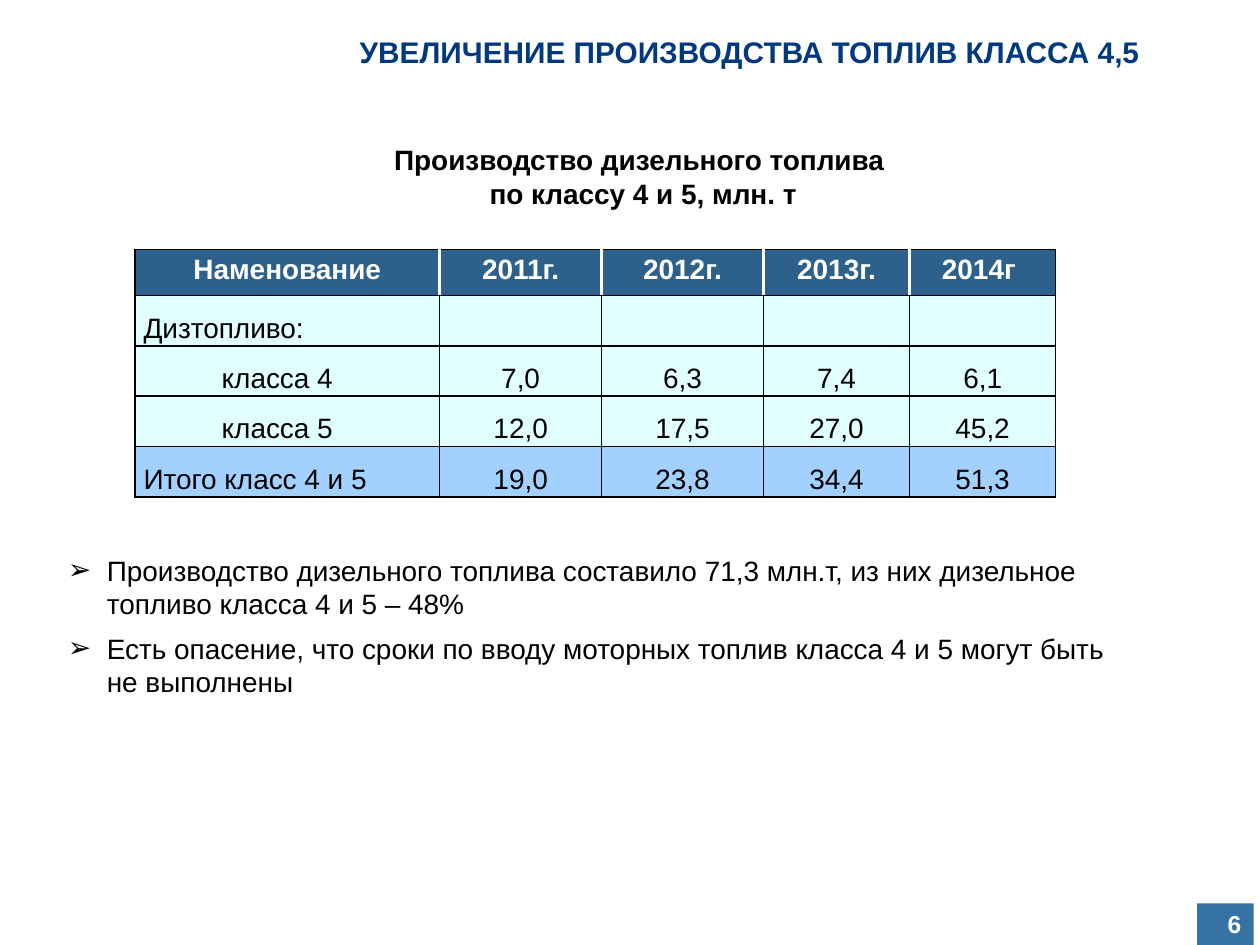
from dataclasses import dataclass

from lxml.etree import SubElement
from pptx import Presentation
from pptx.dml.color import RGBColor
from pptx.enum.shapes import MSO_SHAPE
from pptx.enum.text import MSO_ANCHOR, MSO_AUTO_SIZE, PP_ALIGN
from pptx.oxml.ns import qn
from pptx.util import Inches, Pt


@dataclass(frozen=True)
class Theme:
    """Colours, font and type sizes of the slide."""
    font: str = "Arial"
    title: str = "00397E"
    text: str = "000000"
    light: str = "FFFFFF"
    head: str = "2D608B"
    body: str = "E1FFFF"
    total: str = "A3D1FF"
    badge: str = "3672A4"
    title_size: float = 17
    text_size: float = 16
    badge_size: float = 14
    line: float = 1
    divider: float = 2.25


T = Theme()
WIDTH, HEIGHT = Inches(10), Inches(7.5)
COLUMNS = (24.2, 12.85, 12.85, 11.6, 11.6)
ROWS = (4.87, 5.33, 5.33, 5.33, 5.33)
TABLE = (
    ("Наменование", "2011г.", "2012г.", "2013г.", "2014г "),
    ("Дизтопливо:", "", "", "", ""),
    ("класса 4", "7,0", "6,3", "7,4", "6,1"),
    ("класса 5", "12,0", "17,5", "27,0", "45,2"),
    ("Итого класс 4 и 5", "19,0", "23,8", "34,4", "51,3"),
)
NOTES = (
    "Производство дизельного топлива составило 71,3 млн.т, из них "
    "дизельное топливо класса 4 и 5 – 48%",
    "Есть опасение, что сроки по вводу моторных топлив класса 4 и 5 "
    "могут быть \nне выполнены",
)


def across(share):
    """Turn a percentage of the slide width into a length."""
    return int(WIDTH * share / 100)


def down(share):
    """Turn a percentage of the slide height into a length."""
    return int(HEIGHT * share / 100)


def area(x, y, w, h):
    """Return left, top, width and height from percentages."""
    return across(x), down(y), across(w), down(h)


def write(p, text, size=T.text_size, color=T.text, bold=False, align=PP_ALIGN.LEFT):
    """Add text to a paragraph, one run for each line."""
    p.alignment = align
    for i, line in enumerate(text.split("\n")):
        if i:
            p.add_line_break()
        r = p.add_run()
        r.text = line
        r.font.name, r.font.size, r.font.bold = T.font, Pt(size), bold
        r.font.color.rgb = RGBColor.from_string(color)


def frame(sp, anchor=MSO_ANCHOR.TOP):
    """Prepare a wrapping text frame and return it."""
    tf = sp.text_frame
    tf.word_wrap = True
    tf.auto_size = MSO_AUTO_SIZE.NONE
    tf.vertical_anchor = anchor
    return tf


def add_title(s, text):
    """Place and fill the title placeholder."""
    sp = s.shapes.title
    sp.left, sp.top, sp.width, sp.height = area(22.6, 2.93, 73.8, 5.2)
    write(frame(sp).paragraphs[0], text, T.title_size, T.title, True, PP_ALIGN.CENTER)


def add_caption(s, text):
    """Add the heading above the table."""
    sp = s.shapes.add_textbox(*area(10.7, 14.4, 80.7, 8.53))
    p = frame(sp, MSO_ANCHOR.MIDDLE).paragraphs[0]
    write(p, text, bold=True, align=PP_ALIGN.CENTER)


def add_border(cell, side, color, width):
    """Draw one edge of a table cell."""
    ln = SubElement(cell._tc.get_or_add_tcPr(), qn(f"a:ln{side}"), w=str(Pt(width)))
    SubElement(SubElement(ln, qn("a:solidFill")), qn("a:srgbClr"), val=color)


def style_cell(cell, row, col):
    """Set margins, borders and fill by position in the table."""
    cell.margin_left = cell.margin_right = Inches(0.07)
    cell.margin_top = cell.margin_bottom = 0
    cell.vertical_anchor = MSO_ANCHOR.MIDDLE if row else MSO_ANCHOR.TOP
    inner = {"L": col > 0, "R": col < len(COLUMNS) - 1}
    for side in "LRTB":
        if row == 0 and inner.get(side):
            add_border(cell, side, T.light, T.divider)
        else:
            add_border(cell, side, T.text, T.line)
    fill = {0: T.head, len(ROWS) - 1: T.total}.get(row, T.body)
    cell.fill.solid()
    cell.fill.fore_color.rgb = RGBColor.from_string(fill)


def fill_cell(cell, row, col, text):
    """Write the text of one table cell."""
    p = cell.text_frame.paragraphs[0]
    p.line_spacing = 1.5 if row else 1.15
    align = PP_ALIGN.LEFT if row and not col else PP_ALIGN.CENTER
    if text:
        write(p, text, color=T.text if row else T.light, bold=row == 0, align=align)
    if col == 0 and text.startswith("класса"):
        p._p.get_or_add_pPr().set("marL", str(Inches(0.62)))


def add_fuel_table(s):
    """Add the diesel output table."""
    place = area(10.7, 26.4, sum(COLUMNS), sum(ROWS))
    table = s.shapes.add_table(len(ROWS), len(COLUMNS), *place).table
    for column, share in zip(table.columns, COLUMNS):
        column.width = across(share)
    for row, share in zip(table.rows, ROWS):
        row.height = down(share)
    for i, values in enumerate(TABLE):
        for j, text in enumerate(values):
            style_cell(table.cell(i, j), i, j)
            fill_cell(table.cell(i, j), i, j, text)


def add_notes_list(s, items):
    """Add the bulleted conclusions."""
    tf = frame(s.shapes.add_textbox(*area(4.4, 57.9, 90.6, 21.6)))
    for i, text in enumerate(items):
        p = tf.add_paragraph() if i else tf.paragraphs[0]
        pPr = p._p.get_or_add_pPr()
        pPr.set("marL", str(Inches(0.31)))
        pPr.set("indent", str(-Inches(0.31)))
        SubElement(pPr, qn("a:buFont"), typeface=T.font)
        SubElement(pPr, qn("a:buChar"), char="➢")
        p.space_before = Pt(6 if i else 0)
        write(p, text)


def add_page_badge(s, number):
    """Add the page number in the corner."""
    sp = s.shapes.add_shape(MSO_SHAPE.RECTANGLE, *area(95, 95.6, 4.5, 4.4))
    sp.shadow.inherit = False
    sp.fill.solid()
    sp.fill.fore_color.rgb = RGBColor.from_string(T.badge)
    sp.line.fill.background()
    p = frame(sp, MSO_ANCHOR.MIDDLE).paragraphs[0]
    write(p, number, T.badge_size, T.light, True, PP_ALIGN.RIGHT)


def main():
    """Build and save the slide."""
    prs = Presentation()
    prs.slide_width, prs.slide_height = WIDTH, HEIGHT
    s = prs.slides.add_slide(prs.slide_layouts[5])
    add_title(s, "УВЕЛИЧЕНИЕ ПРОИЗВОДСТВА ТОПЛИВ КЛАССА 4,5")
    add_fuel_table(s)
    add_caption(s, "Производство дизельного топлива \nпо классу 4 и 5, млн. т")
    add_page_badge(s, "6")
    add_notes_list(s, NOTES)
    prs.save("out.pptx")


if __name__ == "__main__":
    main()
